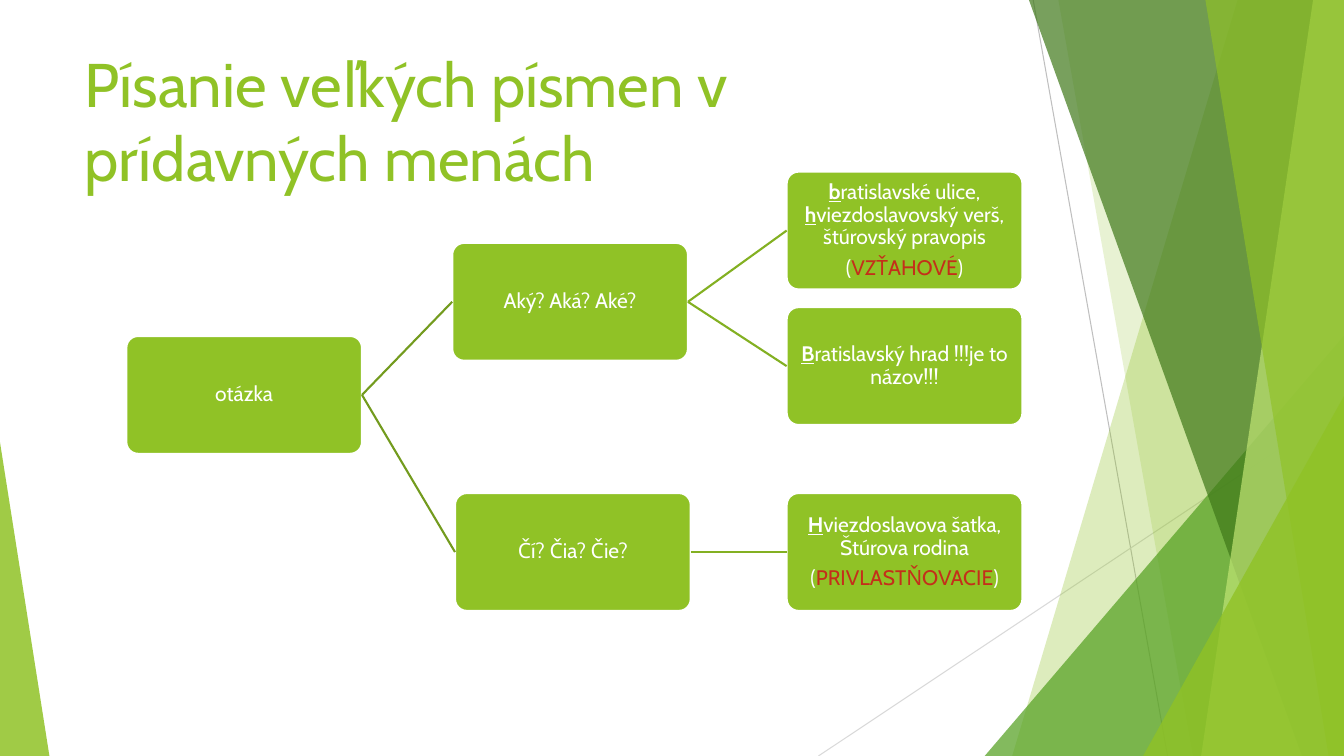
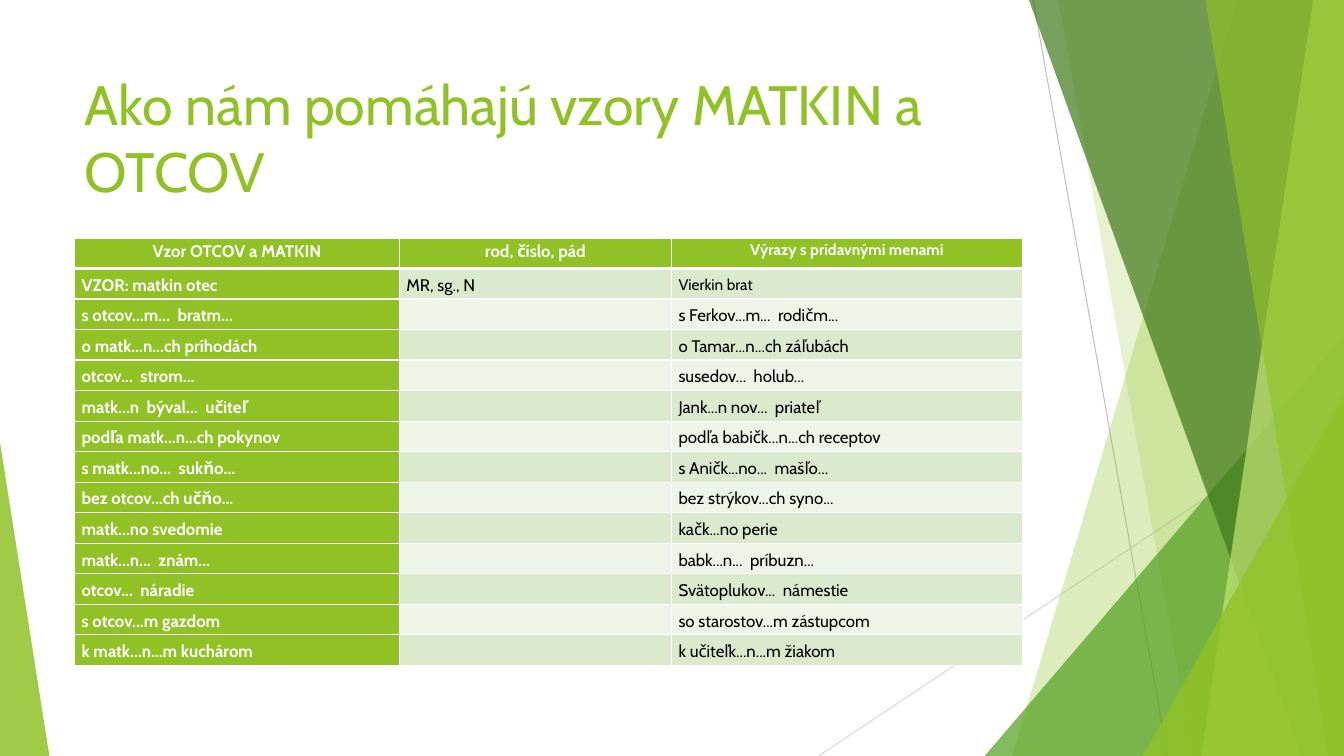
from lxml.etree import SubElement
from pptx import Presentation
from pptx.dml.color import RGBColor
from pptx.enum.shapes import MSO_CONNECTOR, MSO_SHAPE
from pptx.enum.text import MSO_ANCHOR, MSO_AUTO_SIZE, PP_ALIGN
from pptx.oxml.ns import qn
from pptx.util import Pt

FONT = "Cabin"
WIDTH, HEIGHT = 960, 540
LEFT, CONTENT_W = 53.3, 677

GREEN = RGBColor(0x90, 0xC2, 0x26)
MID_GREEN = RGBColor(0x54, 0xA0, 0x21)
DARK_GREEN = RGBColor(0x3F, 0x78, 0x19)
PALE_GREEN = RGBColor(0xC0, 0xE4, 0x74)
LINK_1 = RGBColor(0x73, 0x9B, 0x1E)
LINK_2 = RGBColor(0x83, 0xB0, 0x22)
BAND_1 = RGBColor(0xDB, 0xE9, 0xCD)
BAND_2 = RGBColor(0xEE, 0xF4, 0xE8)
GREY = RGBColor(0xBF, 0xBF, 0xBF)
LIGHT_GREY = RGBColor(0xD9, 0xD9, 0xD9)
RED = RGBColor(0xC4, 0x2F, 0x1A)
WHITE = RGBColor(0xFF, 0xFF, 0xFF)
BLACK = RGBColor(0, 0, 0)

# Backdrop: thin lines, then facets from back to front
RAYS = [((738, 0), (834, 540), GREY), ((960, 290), (584.6, 540), LIGHT_GREY)]
# band: top left x, bottom left x; triangle: left, top, width, apex
FACETS = [
    ("band", (884, 723), GREEN, 30),
    ("band", (756, 852), GREEN, 20),
    ("triangle", (703.4, 239.8, 256.6, 1), MID_GREEN, 72),
    ("band", (735, 930), DARK_GREEN, 70),
    ("band", (938, 858), PALE_GREEN, 70),
    ("band", (861, 949), GREEN, 65),
    ("triangle", (816.5, 283, 143.5, 1), GREEN, 80),
    ("triangle", (0, 316, 35.3, 0), GREEN, 85),
]

# Question tree: name -> (left, top, paragraphs of (text, style) runs)
NODE_W, NODE_H = 168.4, 84.2
NODES = {
    "question": (90.2, 240, [[("otázka", "")]]),
    "which": (323, 173.5, [[("Aký? Aká? Aké?", "")]]),
    "relational": (561.9, 122.6, [
        [("b", "initial"), ("ratislavské ulice, ", ""), ("h", "initial"),
         ("viezdoslavovský verš, štúrovský pravopis", "")],
        [("(", ""), ("VZŤAHOVÉ", "term"), (")", "")]]),
    "name": (561.9, 219.4, [
        [("B", "initial"), ("ratislavský hrad !!!je to názov!!!", "")]]),
    "whose": (325, 352.2, [[("Čí? Čia? Čie?", "")]]),
    "possessive": (561.9, 352.2, [
        [("H", "initial"), ("viezdoslavova šatka, Štúrova rodina", "")],
        [("(", ""), ("PRIVLASTŇOVACIE", "term"), (")", "")]]),
}
LINKS = [
    ("question", "which", LINK_1),
    ("question", "whose", LINK_1),
    ("which", "relational", LINK_2),
    ("which", "name", LINK_2),
    ("whose", "possessive", LINK_2),
]

# Exercise table
COLUMNS = [232, 194.4, 250.6]
ROW_H = 21.8
ROWS = [
    ("Vzor OTCOV a MATKIN", "rod, číslo, pád", "Výrazy s prídavnými menami"),
    ("VZOR: matkin otec", "MR, sg., N", "Vierkin brat"),
    ("s otcov...m...  bratm...", "", "s Ferkov...m...  rodičm..."),
    ("o matk...n...ch príhodách", "", "o Tamar...n...ch záľubách"),
    ("otcov...  strom...", "", "susedov...  holub..."),
    ("matk...n  býval...  učiteľ", "", "Jank...n nov...  priateľ"),
    ("podľa matk...n...ch pokynov", "", "podľa babičk...n...ch receptov"),
    ("s matk...no...  sukňo...", "", "s Aničk...no...  mašľo..."),
    ("bez otcov...ch učňo...", "", "bez strýkov...ch syno..."),
    ("matk...no svedomie", "", "kačk...no perie"),
    ("matk...n...  znám...", "", "babk...n...  príbuzn..."),
    ("otcov...  náradie", "", "Svätoplukov...  námestie"),
    ("s otcov...m gazdom", "", "so starostov...m zástupcom"),
    ("k matk...n...m kuchárom", "", "k učiteľk...n...m žiakom"),
]


def set_font(font, size, color, bold=False):
    font.name, font.size, font.bold = FONT, Pt(size), bold
    font.color.rgb = color


def add_line(s, start, end, color, width):
    line = s.shapes.add_connector(MSO_CONNECTOR.STRAIGHT, *map(Pt, start + end))
    line.line.color.rgb = color
    line.line.width = Pt(width)
    SubElement(line.element.spPr, qn("a:effectLst"))
    return line


def add_facet(s, kind, geometry, color, opacity):
    if kind == "band":
        top_x, bottom_x = geometry
        builder = s.shapes.build_freeform(top_x, 0, scale=Pt(1))
        builder.add_line_segments(
            [(WIDTH, 0), (WIDTH, HEIGHT), (bottom_x, HEIGHT)], close=True)
        facet = builder.convert_to_shape()
    else:
        left, top, width, apex = geometry
        facet = s.shapes.add_shape(MSO_SHAPE.ISOSCELES_TRIANGLE, Pt(left), Pt(top),
                                   Pt(width), Pt(HEIGHT - top))
        facet.adjustments[0] = apex
    facet.shadow.inherit = False
    facet.fill.solid()
    facet.fill.fore_color.rgb = color
    facet.line.fill.background()
    rgb = facet.element.spPr.find(qn("a:solidFill"))[0]
    SubElement(rgb, qn("a:alpha"), val=str(opacity * 1000))
    return facet


def add_backdrop(s, layout):
    """Draw the backdrop once and move it to the shared layout."""
    parts = [add_line(s, *ray, 0.75) for ray in RAYS]
    parts += [add_facet(s, *facet) for facet in FACETS]
    for part in parts:
        layout.shapes.element.append(part.element)


def set_title(s, text, top, height, size):
    title = s.shapes.title
    title.left, title.top = Pt(LEFT), Pt(top)
    title.width, title.height = Pt(CONTENT_W), Pt(height)
    tf = title.text_frame
    tf.text = text
    tf.auto_size = MSO_AUTO_SIZE.NONE
    tf.vertical_anchor = MSO_ANCHOR.MIDDLE
    p = tf.paragraphs[0]
    p.alignment = PP_ALIGN.LEFT
    set_font(p.font, size, GREEN)


def add_node(s, left, top, paragraphs):
    node = s.shapes.add_shape(MSO_SHAPE.ROUNDED_RECTANGLE, Pt(left), Pt(top),
                              Pt(NODE_W), Pt(NODE_H))
    node.adjustments[0] = 0.1
    node.shadow.inherit = False
    node.fill.solid()
    node.fill.fore_color.rgb = GREEN
    node.line.color.rgb = WHITE
    node.line.width = Pt(1.5)
    tf = node.text_frame
    tf.word_wrap = True
    tf.vertical_anchor = MSO_ANCHOR.MIDDLE
    tf.margin_left = tf.margin_right = tf.margin_top = tf.margin_bottom = Pt(0.9)
    for i, runs in enumerate(paragraphs):
        p = tf.add_paragraph() if i else tf.paragraphs[0]
        p.alignment = PP_ALIGN.CENTER
        p.line_spacing = 0.9
        p.space_after = Pt(5.25)
        for text, style in runs:
            r = p.add_run()
            r.text = text
            set_font(r.font, 15, RED if style == "term" else WHITE, style == "initial")
            r.font.underline = style == "initial"
    return node


def set_borders(cell, top, bottom):
    tc_pr = cell._tc.get_or_add_tcPr()
    for side, width in (("L", 1), ("R", 1), ("T", top), ("B", bottom)):
        ln = SubElement(tc_pr, qn(f"a:ln{side}"), w=str(Pt(width)))
        fill = SubElement(ln, qn("a:solidFill"))
        SubElement(fill, qn("a:srgbClr"), val=str(WHITE))


def fill_cell(cell, text, row, col):
    header = row == 0
    strong = header or col == 0
    set_borders(cell, 3 if row == 1 else 1, 3 if header else 1)
    cell.fill.solid()
    cell.fill.fore_color.rgb = GREEN if strong else BAND_1 if row % 2 else BAND_2
    cell.margin_left = cell.margin_right = Pt(5)
    cell.margin_top = cell.margin_bottom = 0
    cell.vertical_anchor = MSO_ANCHOR.TOP if header else MSO_ANCHOR.MIDDLE
    cell.text = text
    p = cell.text_frame.paragraphs[0]
    set_font(p.font, 11 if col == 2 and row < 2 else 12,
             WHITE if strong else BLACK, strong)
    if text:
        p.line_spacing = 1.15
        p.space_before = Pt(6)
    if header:
        p.alignment = PP_ALIGN.CENTER
        p.space_after = Pt(6)


def build_tree_slide(s):
    set_title(s, "Písanie veľkých písmen v prídavných menách", 23, 125, 44)
    nodes = {name: add_node(s, *node) for name, node in NODES.items()}
    for start, end, color in LINKS:
        link = add_line(s, (0, 0), (0, 0), color, 1.5)
        link.begin_connect(nodes[start], 3)
        link.end_connect(nodes[end], 1)


def build_table_slide(s):
    set_title(s, "Ako nám pomáhajú vzory MATKIN a OTCOV", 44.6, 106.6, 39.6)
    table = s.shapes.add_table(len(ROWS), len(COLUMNS), Pt(LEFT), Pt(170),
                               Pt(CONTENT_W), Pt(ROW_H * len(ROWS))).table
    table.horz_banding = False
    for column, width in zip(table.columns, COLUMNS):
        column.width = Pt(width)
    for i, texts in enumerate(ROWS):
        table.rows[i].height = Pt(ROW_H)
        for j, text in enumerate(texts):
            fill_cell(table.cell(i, j), text, i, j)


def main():
    prs = Presentation()
    prs.slide_width, prs.slide_height = Pt(WIDTH), Pt(HEIGHT)
    layout = prs.slide_layouts[5]
    tree, exercise = (prs.slides.add_slide(layout) for _ in range(2))
    add_backdrop(tree, layout)
    build_tree_slide(tree)
    build_table_slide(exercise)
    prs.save("out.pptx")


if __name__ == "__main__":
    main()
